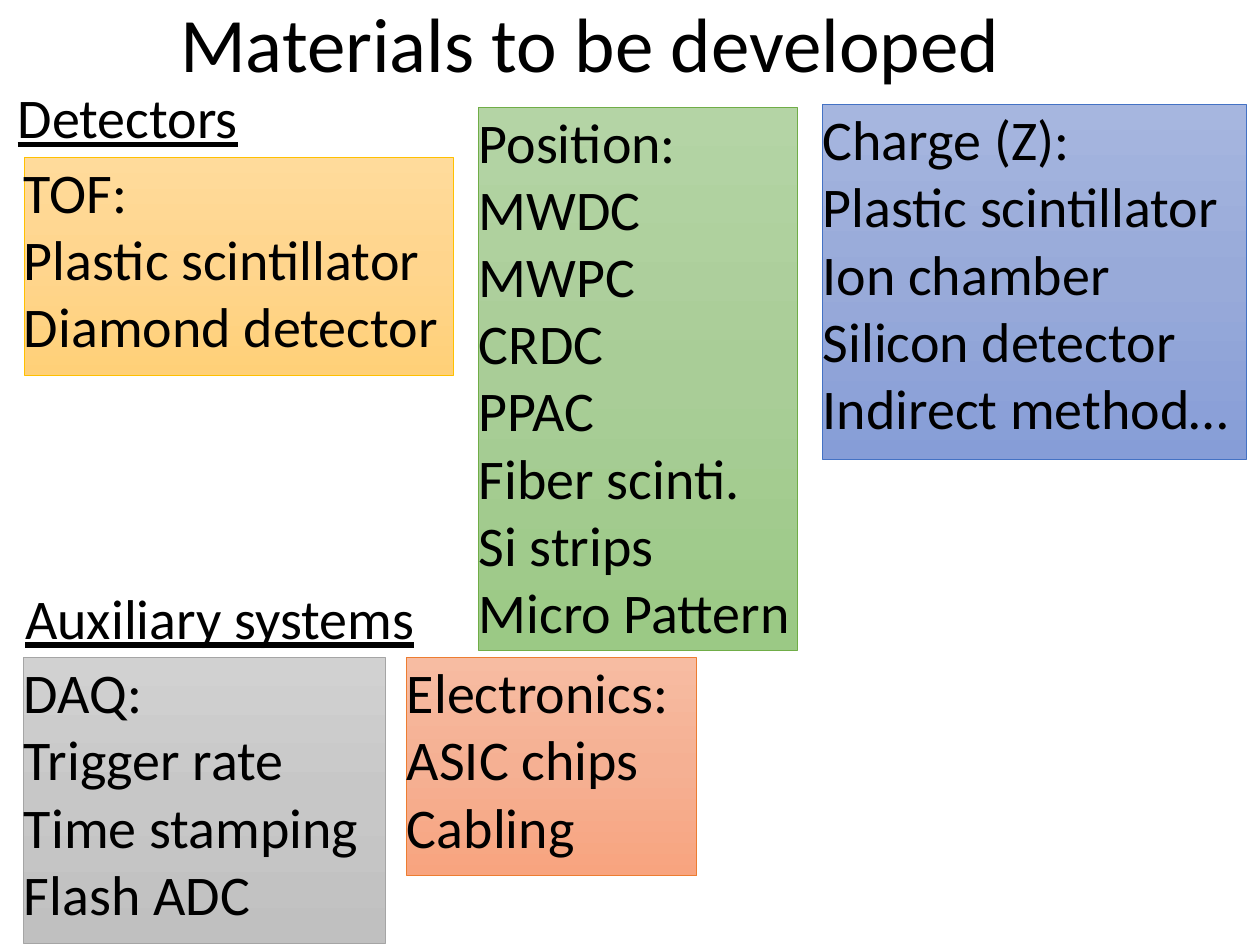
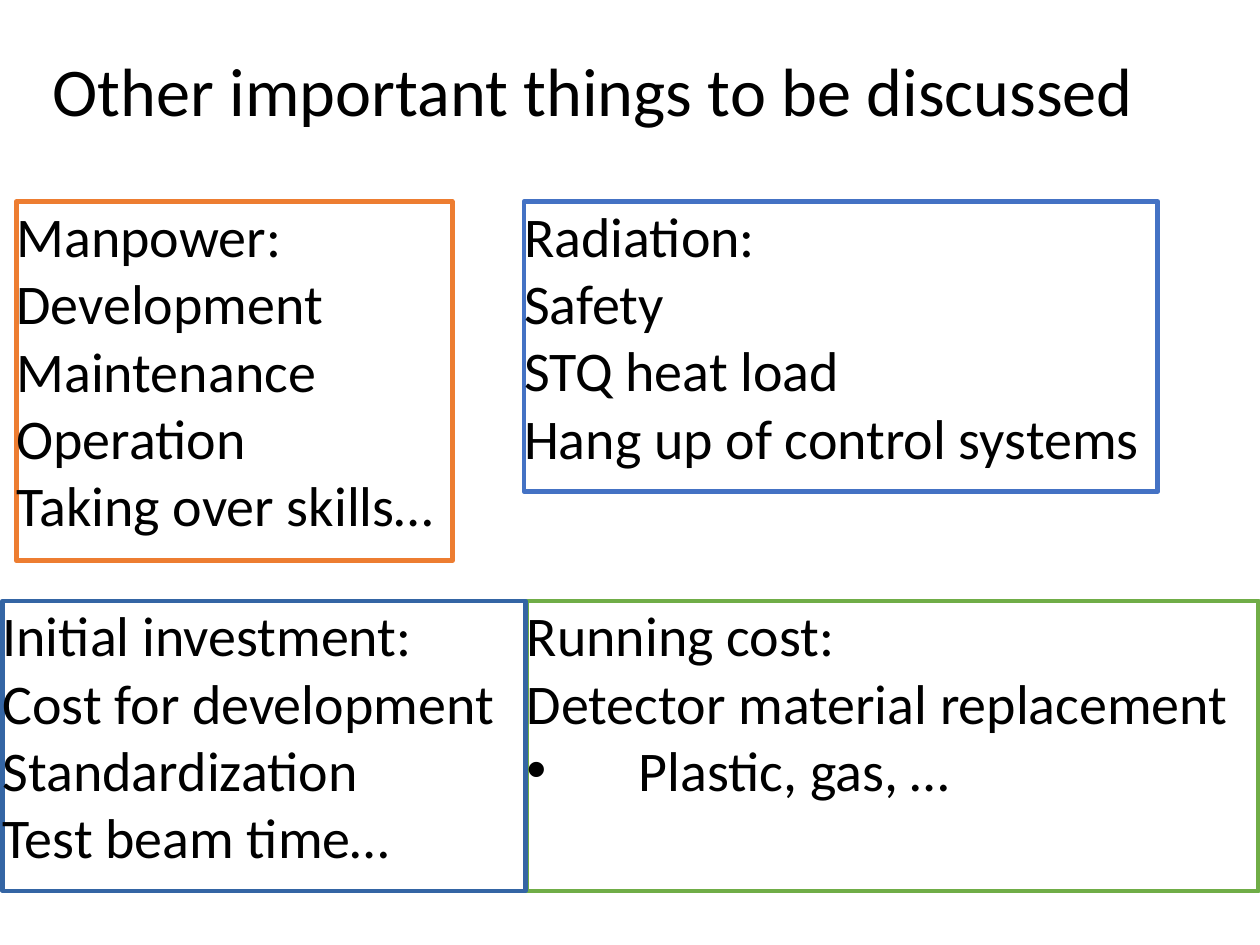
from copy import deepcopy

from lxml.etree import SubElement
from pptx import Presentation
from pptx.dml.color import RGBColor
from pptx.enum.shapes import MSO_SHAPE
from pptx.enum.text import MSO_ANCHOR, PP_ALIGN
from pptx.oxml.ns import qn
from pptx.util import Pt

PX = 9144  # EMU per px, 100 px to the inch
FONT = "Calibri"
BLACK, WHITE = "000000", "FFFFFF"
ORANGE, BLUE, GREEN = "ED7D31", "4472C4", "70AD47"
GOLD, GRAY, DEEP_BLUE = "FFC000", "A5A5A5", "3465A4"
BODY_SIZE = 32
BULLET_INDENT = 89
LEFT = 19


def rgb(color):
    return RGBColor.from_string(color)


class Deck:
    """Holds the shared style and the slide being filled."""

    def __init__(self, width, height):
        self.presentation = Presentation()
        self.presentation.slide_width = width * PX
        self.presentation.slide_height = height * PX
        self.slide = None

    def new_slide(self):
        blank = self.presentation.slide_layouts[6]
        self.slide = self.presentation.slides.add_slide(blank)

    def set_text(self, frame, lines, size, inset=0, anchor=MSO_ANCHOR.TOP):
        frame.word_wrap = True
        frame.vertical_anchor = anchor
        frame.margin_left = frame.margin_right = inset * PX
        frame.margin_top = frame.margin_bottom = inset * PX
        frame.text = "\n".join(lines)
        for paragraph in frame.paragraphs:
            paragraph.alignment = PP_ALIGN.LEFT
            paragraph.font.name = FONT
            paragraph.font.size = Pt(size)
            paragraph.font.color.rgb = rgb(BLACK)

    def label(self, text, box, size, anchor=MSO_ANCHOR.TOP):
        """Add one line of text and return its paragraph."""
        frame = self.slide.shapes.add_textbox(*(n * PX for n in box)).text_frame
        self.set_text(frame, [text], size, inset=5, anchor=anchor)
        return frame.paragraphs[0]

    def title(self, text, box, size):
        self.label(text, box, size, MSO_ANCHOR.MIDDLE).line_spacing = 0.9

    def heading(self, text, box):
        self.label(text, box, BODY_SIZE).font.underline = True

    def panel(self, lines, box, border, border_width, shades=None):
        """Add a bordered list, white or shaded, and return its paragraphs."""
        panel = self.slide.shapes.add_shape(
            MSO_SHAPE.RECTANGLE, *(n * PX for n in box))
        panel.shadow.inherit = False
        panel.line.color.rgb = rgb(border)
        panel.line.width = Pt(border_width)
        if shades:
            self.shade(panel, shades)
        else:
            panel.fill.solid()
            panel.fill.fore_color.rgb = rgb(WHITE)
        self.set_text(panel.text_frame, lines, BODY_SIZE)
        return panel.text_frame.paragraphs

    def shade(self, panel, shades):
        panel.fill.gradient()
        panel.fill.gradient_angle = 270
        first_stop = panel.element.spPr.find(".//" + qn("a:gs"))
        first_stop.addnext(deepcopy(first_stop))
        for stop, color, position in zip(
                panel.fill.gradient_stops, shades, (0, 0.5, 1)):
            stop.color.rgb = rgb(color)
            stop.position = position

    def bullet(self, paragraph):
        properties = paragraph._p.get_or_add_pPr()
        properties.set("marL", str(BULLET_INDENT * PX))
        properties.set("indent", str(-BULLET_INDENT * PX))
        SubElement(properties, qn("a:buFont")).set("typeface", "Arial")
        SubElement(properties, qn("a:buChar")).set("char", "•")
        # the bullet belongs before the default run properties
        properties.append(properties.find(qn("a:defRPr")))


def add_materials(deck):
    deck.new_slide()
    deck.title("Materials to be developed", (138, -9, 799, 94), 44)
    groups = [
        (["TOF:", "Plastic scintillator", "Diamond detector"],
         (LEFT, 125, 341, 173), GOLD, ("FFDB9B", "FFD58D", "FFD078")),
        (["Position:", "MWDC", "MWPC", "CRDC", "PPAC", "Fiber scinti.",
          "Si strips", "Micro Pattern"],
         (380, 85, 253, 431), GREEN, ("B4D4A5", "A9CD97", "9BC985")),
        (["Charge (Z):", "Plastic scintillator", "Ion chamber",
          "Silicon detector", "Indirect method…"],
         (653, 83, 336, 282), BLUE, ("A6B6DF", "98AAD9", "869DD7")),
        (["DAQ:", "Trigger rate", "Time stamping", "Flash ADC"],
         (LEFT, 522, 287, 227), GRAY, ("D1D1D1", "C7C7C7", "C0C0C0")),
        (["Electronics:", "ASIC chips", "Cabling"],
         (323, 522, 230, 173), ORANGE, ("F7BCA2", "F5B093", "F8A47F")),
    ]
    for lines, box, border, shades in groups:
        deck.panel(lines, box, border, 0.5, shades)
    deck.heading("Detectors", (9, 61, 190, 64))
    deck.heading("Auxiliary systems", (15, 458, 325, 64))


def add_discussion(deck):
    deck.new_slide()
    deck.title("Other important things to be discussed",
               (37, 28, 903, 94), 39)
    top, bottom, height = 160, 477, 230
    deck.panel(["Radiation:", "Safety", "STQ heat load",
                "Hang up of control systems"],
               (416, top, 503, height), BLUE, 2.75)
    running_cost = deck.panel(
        ["Running cost:", "Detector material replacement",
         "Plastic, gas, …"],
        (418, bottom, 581, height), GREEN, 2.5)
    deck.bullet(running_cost[-1])
    deck.panel(["Manpower:", "Development", "Maintenance", "Operation",
                "Taking over skills…"],
               (13, top, 346, 285), ORANGE, 2.75)
    deck.panel(["Initial investment:", "Cost for development",
                "Standardization", "Test beam time…"],
               (2, bottom, 415, height), DEEP_BLUE, 2.5)


def main():
    deck = Deck(1000, 750)
    add_materials(deck)
    add_discussion(deck)
    deck.presentation.save("out.pptx")


if __name__ == "__main__":
    main()
